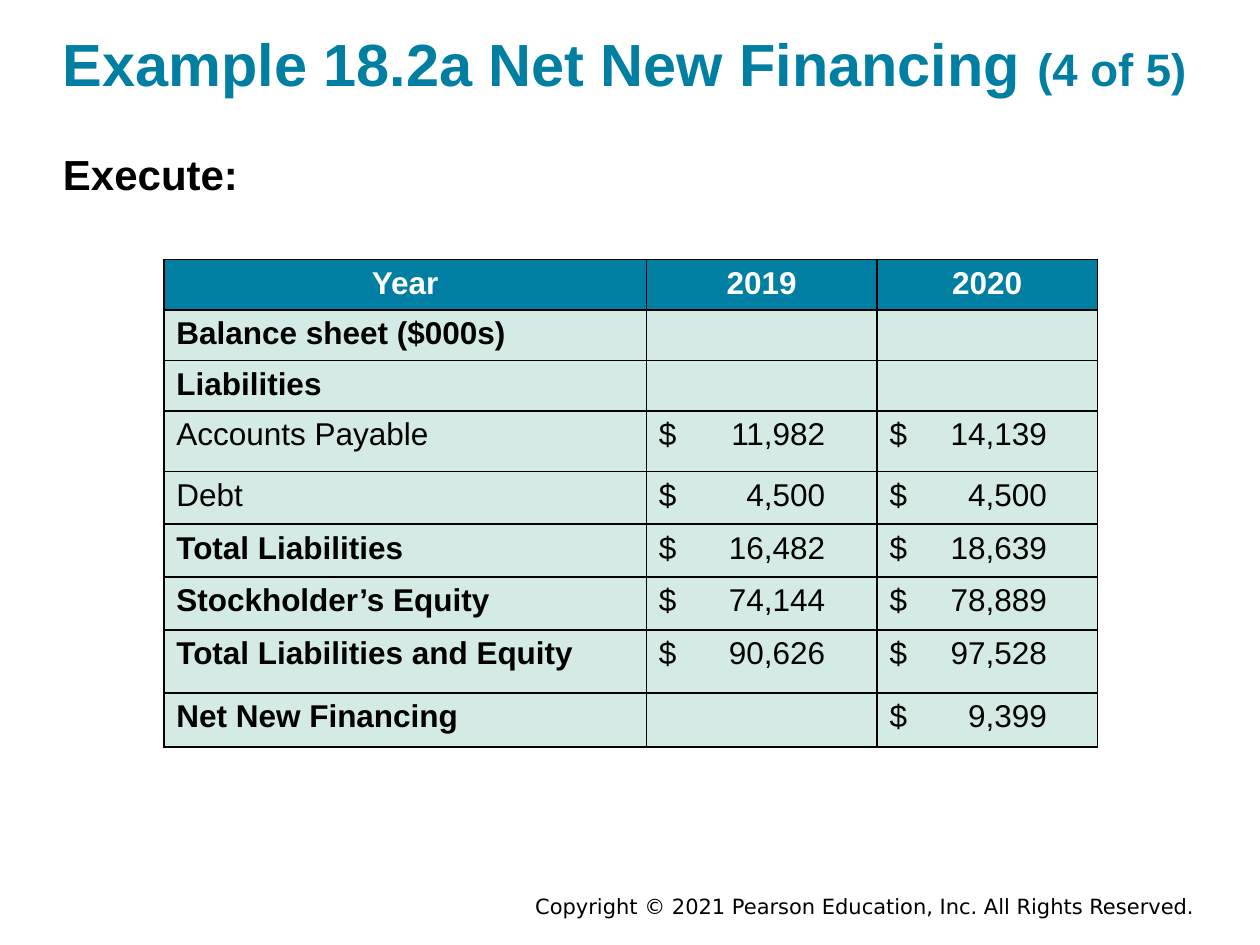
"""Build the net new financing slide with its balance sheet table."""
import dataclasses
import typing

import lxml.etree
import pptx
import pptx.dml.color
import pptx.enum.text
import pptx.oxml.ns
import pptx.util

Inches = pptx.util.Inches
Align = pptx.enum.text.PP_ALIGN
Anchor = pptx.enum.text.MSO_ANCHOR


@dataclasses.dataclass(frozen=True)
class Theme:
    font: str = "Arial"
    footer_font: str = "DejaVu Sans"
    accent: str = "007FA3"
    band: str = "D4EAE4"
    ink: str = "000000"
    paper: str = "FFFFFF"
    title_size: int = 34
    counter_size: int = 26
    heading_size: int = 24
    table_size: int = 18
    footer_size: int = 12
    border_width: int = 1


class Row(typing.NamedTuple):
    label: str
    amounts: tuple[str, str]
    height: float
    bold: bool = True


class Column(typing.NamedTuple):
    width: float
    amount_tab: float = 0


THEME = Theme()
HEADER = Row("Year", ("2019", "2020"), 0.38)
ROWS = (
    Row("Balance sheet ($000s)", ("", ""), 0.38),
    Row("Liabilities", ("", ""), 0.38),
    Row("Accounts Payable", ("11,982", "14,139"), 0.48, bold=False),
    Row("Debt", ("4,500", "4,500"), 0.42, bold=False),
    Row("Total Liabilities", ("16,482", "18,639"), 0.42),
    Row("Stockholder’s Equity", ("74,144", "78,889"), 0.42),
    Row("Total Liabilities and Equity", ("90,626", "97,528"), 0.5),
    Row("Net New Financing", ("", "9,399"), 0.43),
)
COLUMNS = (Column(3.83), Column(1.83, 1.32), Column(1.75, 1.25))


def style_font(font, size: int, color: str, bold: bool = False, name: str = THEME.font) -> None:
    font.name = name
    font.size = pptx.util.Pt(size)
    font.bold = bold
    font.color.rgb = pptx.dml.color.RGBColor.from_string(color)


def add_text_box(slide, left: float, top: float, width: float, height: float, margin: float = 0):
    frame = slide.shapes.add_textbox(
        Inches(left), Inches(top), Inches(width), Inches(height)
    ).text_frame
    frame.word_wrap = True
    frame.margin_left = frame.margin_right = Inches(margin)
    frame.margin_top = frame.margin_bottom = Inches(margin / 2)
    return frame


def add_child(parent, tag: str, **attributes: str):
    return lxml.etree.SubElement(parent, pptx.oxml.ns.qn(tag), **attributes)


def add_right_tab(paragraph, position: float) -> None:
    tabs = add_child(paragraph._p.get_or_add_pPr(), "a:tabLst")
    add_child(tabs, "a:tab", pos=str(Inches(position)), algn="r")


def add_borders(cell) -> None:
    properties = cell._tc.get_or_add_tcPr()
    for index, side in enumerate(("a:lnL", "a:lnR", "a:lnT", "a:lnB")):
        line = add_child(properties, side, w=str(pptx.util.Pt(THEME.border_width)))
        add_child(add_child(line, "a:solidFill"), "a:srgbClr", val=THEME.ink)
        properties.insert(index, line)


def fill_cell(cell, text: str, is_header: bool, bold: bool, amount_tab: float) -> None:
    cell.fill.solid()
    cell.fill.fore_color.rgb = pptx.dml.color.RGBColor.from_string(
        THEME.accent if is_header else THEME.band
    )
    add_borders(cell)
    paragraph = cell.text_frame.paragraphs[0]
    is_amount = bool(text and amount_tab and not is_header)
    paragraph.text = f"$\t{text}" if is_amount else text
    paragraph.alignment = Align.CENTER if is_header else Align.LEFT
    if is_amount:
        add_right_tab(paragraph, amount_tab)
    style_font(paragraph.font, THEME.table_size, THEME.paper if is_header else THEME.ink, bold)


def add_balance_sheet(slide) -> None:
    rows = (HEADER, *ROWS)
    table = slide.shapes.add_table(
        len(rows), len(COLUMNS), Inches(1.3), Inches(2.06),
        Inches(sum(column.width for column in COLUMNS)),
        Inches(sum(row.height for row in rows)),
    ).table
    for column_index, column in enumerate(COLUMNS):
        table.columns[column_index].width = Inches(column.width)
    for row_index, row in enumerate(rows):
        table.rows[row_index].height = Inches(row.height)
        is_header = row is HEADER
        for column_index, text in enumerate((row.label, *row.amounts)):
            bold = is_header or (row.bold and column_index == 0)
            fill_cell(table.cell(row_index, column_index), text, is_header, bold,
                      COLUMNS[column_index].amount_tab)


def add_title(slide) -> None:
    frame = add_text_box(slide, 0.5, 0.16, 9, 0.68)
    frame.vertical_anchor = Anchor.MIDDLE
    for text, size in (
        ("Example 18.2a Net New Financing ", THEME.title_size),
        ("(4 of 5)", THEME.counter_size),
    ):
        run = frame.paragraphs[0].add_run()
        run.text = text
        style_font(run.font, size, THEME.accent, bold=True)


def add_heading(slide) -> None:
    paragraph = add_text_box(slide, 0.5, 1.18, 9, 0.45).paragraphs[0]
    paragraph.text = "Execute:"
    style_font(paragraph.font, THEME.heading_size, THEME.ink, bold=True)


def add_footer(slide) -> None:
    paragraph = add_text_box(slide, 4, 7.04, 5.58, 0.3, margin=0.1).paragraphs[0]
    paragraph.text = "Copyright © 2021 Pearson Education, Inc. All Rights Reserved."
    paragraph.alignment = Align.RIGHT
    style_font(paragraph.font, THEME.footer_size, THEME.ink, name=THEME.footer_font)


def main() -> None:
    presentation = pptx.Presentation()
    presentation.slide_width = Inches(10)
    presentation.slide_height = Inches(7.5)
    slide = presentation.slides.add_slide(presentation.slide_layouts[6])
    add_footer(slide)
    add_title(slide)
    add_heading(slide)
    add_balance_sheet(slide)
    presentation.save("out.pptx")


if __name__ == "__main__":
    main()
